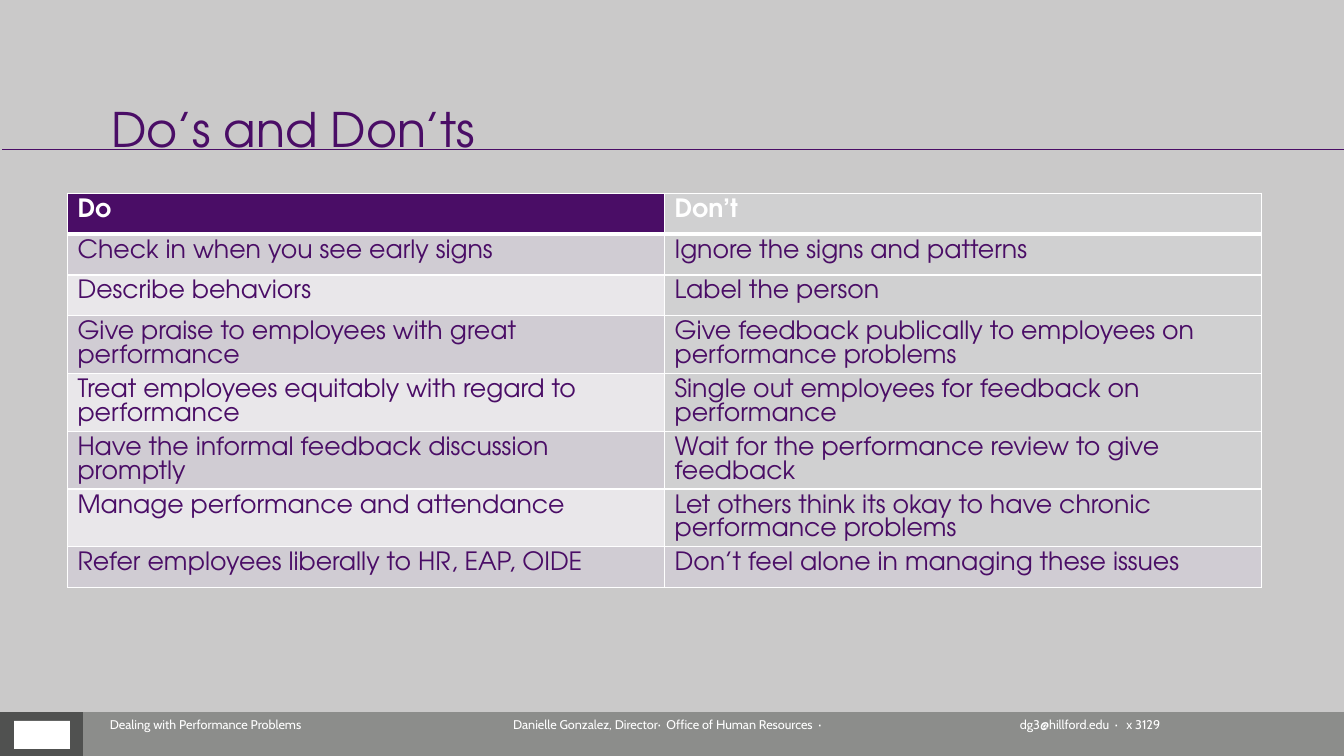
from lxml import etree
from pptx import Presentation
from pptx.dml.color import RGBColor
from pptx.enum.shapes import MSO_CONNECTOR, MSO_SHAPE
from pptx.enum.text import MSO_ANCHOR, PP_ALIGN
from pptx.oxml.ns import qn
from pptx.util import Pt

RECTANGLE = MSO_SHAPE.RECTANGLE
STRAIGHT = MSO_CONNECTOR.STRAIGHT
TOP = MSO_ANCHOR.TOP
LEFT = PP_ALIGN.LEFT

PURPLE, WHITE = "4A0D66", "FFFFFF"
LILAC, PALE, GREY = "D0CCD3", "E9E7EA", "D0D0D1"
HEADING_FONT, FOOTER_FONT = "TeX Gyre Adventor", "Cabin"

ADVICE = [
    ("Do", "Don’t"),
    ("Check in when you see early signs", "Ignore the signs and patterns"),
    ("Describe behaviors", "Label the person"),
    ("Give praise to employees with great performance",
     "Give feedback publically to employees on performance problems"),
    ("Treat employees equitably with regard to performance",
     "Single out employees for feedback on performance"),
    ("Have the informal feedback discussion promptly",
     "Wait for the performance review to give feedback"),
    ("Manage performance and attendance",
     "Let others think its okay to have chronic performance problems"),
    ("Refer employees liberally to HR, EAP, OIDE",
     "Don’t feel alone in managing these issues"),
]
TWO_LINE_ROWS = range(3, 7)
FOOTER = ("Dealing with Performance Problems\t\t\t"
          "Danielle Gonzalez, Director·  Office of Human Resources  · \t\t"
          " dg3@hillford.edu  ·   x 3129")


def rgb(code):
    return RGBColor.from_string(code)


def write(frame, text, size, font, color, bold=False, line_spacing=None):
    para = frame.paragraphs[0]
    para.alignment = LEFT
    para.line_spacing = line_spacing
    span = para.add_run()
    span.text = text
    span.font.size = Pt(size)
    span.font.name = font
    span.font.bold = bold
    span.font.color.rgb = rgb(color)


deck = Presentation()
deck.slide_width, deck.slide_height = Pt(960), Pt(540)
page = deck.slides.add_slide(deck.slide_layouts[5])

# Grey panel, then the footer band with a plain emblem block at its left end
for left, top, width, height, color in [
    (0, 0, 960, 509, "CAC9C9"),
    (0, 508.7, 59.3, 31.3, "505150"),
    (59.3, 508.7, 900.7, 31.3, "8C8D8B"),
    (10, 515, 40, 20, WHITE),
]:
    band = page.shapes.add_shape(RECTANGLE, Pt(left), Pt(top), Pt(width), Pt(height))
    band.shadow.inherit = False
    band.fill.solid()
    band.fill.fore_color.rgb = rgb(color)
    band.line.fill.background()

footer = page.shapes.add_textbox(Pt(78.5), Pt(512.7), Pt(769), Pt(13.7)).text_frame
footer.word_wrap = True
footer.margin_left = footer.margin_top = footer.margin_right = 0
write(footer, FOOTER, 9, FOOTER_FONT, WHITE, line_spacing=Pt(10))
footer.paragraphs[0]._p.get_or_add_pPr().set("defTabSz", str(Pt(72)))

rule = page.shapes.add_connector(STRAIGHT, Pt(1.5), Pt(106.6), Pt(960), Pt(106.6))
rule.line.color.rgb = rgb(PURPLE)
rule.line.width = Pt(1)
etree.SubElement(rule._element.spPr, qn("a:effectLst"))

# The title placeholder comes first in the layout, so it is raised above the panel
title = page.shapes.title
page.shapes._spTree.append(title._element)
title.left, title.top, title.width, title.height = Pt(79.7), Pt(71.3), Pt(788), Pt(56)
heading = title.text_frame
heading.margin_left = heading.margin_top = heading.margin_right = heading.margin_bottom = 0
heading.vertical_anchor = TOP
write(heading, "Do’s and Don’ts", 34, HEADING_FONT, PURPLE)

heights = [40.8 if row in TWO_LINE_ROWS else 29.2 for row in range(len(ADVICE))]
table = page.shapes.add_table(
    len(ADVICE), 2, Pt(48.2), Pt(138), Pt(853), Pt(sum(heights))).table
for row, texts in enumerate(ADVICE):
    is_header, is_last = row == 0, row == len(ADVICE) - 1
    table.rows[row].height = Pt(heights[row])
    do_fill = PURPLE if is_header else LILAC if row % 2 else PALE
    fills = (do_fill, LILAC if is_last else GREY)
    for column, (text, fill) in enumerate(zip(texts, fills)):
        cell = table.cell(row, column)
        write(cell.text_frame, text, 18, HEADING_FONT,
              WHITE if is_header else PURPLE, bold=is_header, line_spacing=Pt(17))
        properties = cell._tc.get_or_add_tcPr()
        for side in ("L", "R", "T", "B"):
            thick = (is_header and side == "B") or (row == 1 and side == "T")
            border = etree.SubElement(properties, qn(f"a:ln{side}"), w=str(Pt(3 if thick else 1)))
            paint = etree.SubElement(border, qn("a:solidFill"))
            etree.SubElement(paint, qn("a:srgbClr"), val=WHITE)
        cell.fill.solid()
        cell.fill.fore_color.rgb = rgb(fill)

deck.save("out.pptx")
